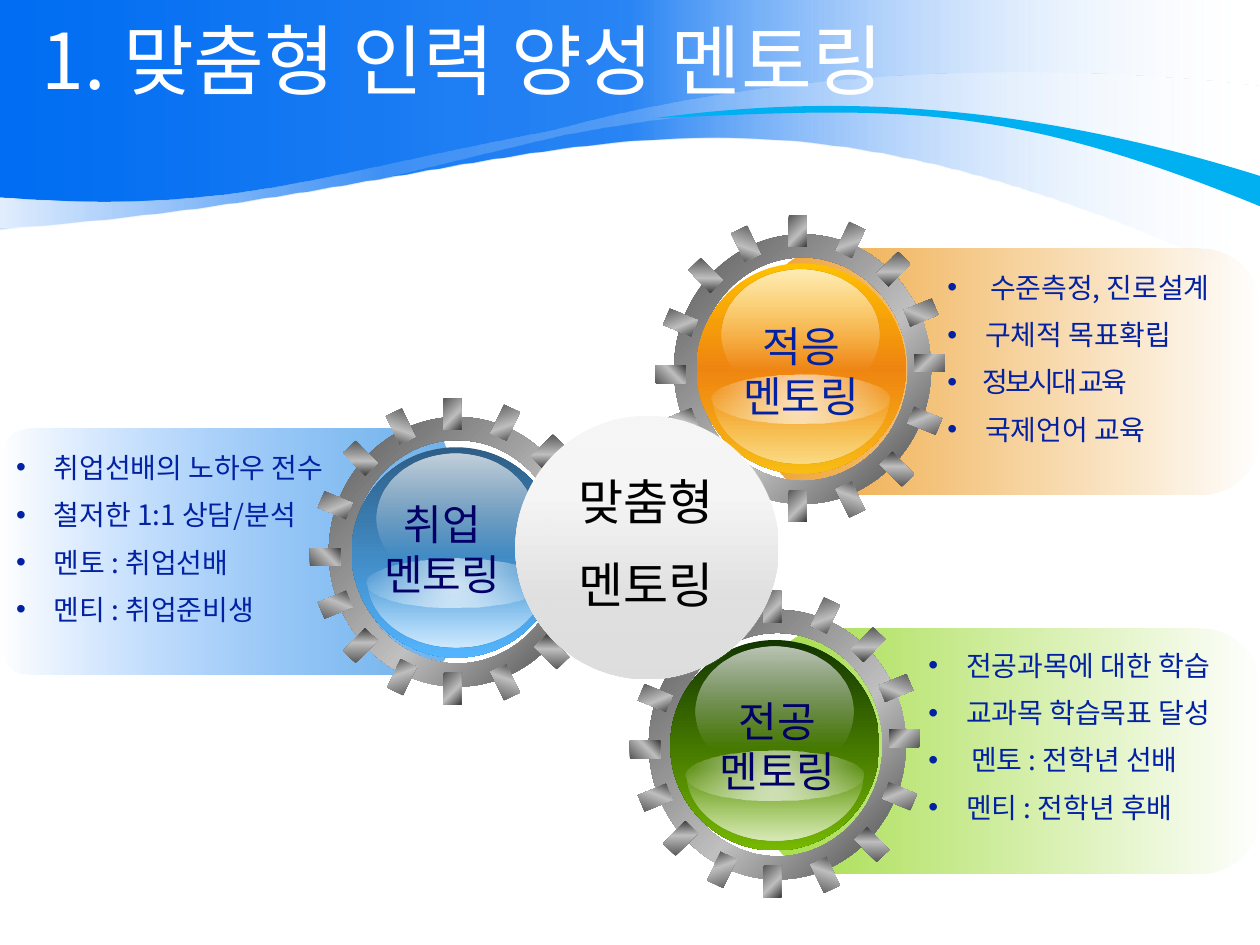
from pptx import Presentation
from pptx.dml.color import RGBColor
from pptx.enum.shapes import MSO_SHAPE
from pptx.enum.text import MSO_ANCHOR, MSO_AUTO_SIZE, PP_ALIGN
from pptx.oxml.ns import qn
from pptx.util import Inches, Pt
from lxml import etree

FONT = "Noto Sans CJK KR"
NAVY, INK = "0322A3", "000066"
STEEL = [(0, "595959"), (59, "BFBFBF"), (100, "404040")]
CAP = [(0, "FFFFFF", 71), (78, "FFFFFF", 0)]
SPOT = [(0, "FFFFFF", 73), (100, "FFFFFF", 6)]

deck = Presentation()
deck.slide_width, deck.slide_height = Inches(10), Inches(7.5)
slide = deck.slides.add_slide(deck.slide_layouts[5])
shapes = slide.shapes


def paint(shape, fill, angle=90, round_fill=False):
    shape.shadow.inherit = False
    shape.line.fill.background()
    if isinstance(fill, str):
        shape.fill.solid()
        shape.fill.fore_color.rgb = RGBColor.from_string(fill)
        return
    shape.fill.gradient()
    grad = shape._element.spPr.find(qn("a:gradFill"))
    for child in list(grad):
        grad.remove(child)
    grad.set("rotWithShape", "1")
    stops = etree.SubElement(grad, qn("a:gsLst"))
    for place, color, *alpha in fill:
        stop = etree.SubElement(stops, qn("a:gs"), pos=str(place * 1000))
        tint = etree.SubElement(stop, qn("a:srgbClr"), val=color)
        if alpha:
            etree.SubElement(tint, qn("a:alpha"), val=str(alpha[0] * 1000))
    if round_fill:
        ring = etree.SubElement(grad, qn("a:path"), path="circle")
        etree.SubElement(ring, qn("a:fillToRect"), l="50000", t="50000", r="50000", b="50000")
    else:
        etree.SubElement(grad, qn("a:lin"), ang=str(angle * 60000), scaled="0")


def write(text, box, size, color=NAVY, align=PP_ALIGN.CENTER, anchor=MSO_ANCHOR.TOP,
          gap=0, bullet=False, wrap=True, holder=None):
    holder = holder or shapes.add_textbox(0, 0, 0, 0)
    holder.left, holder.top, holder.width, holder.height = map(Inches, box)
    frame = holder.text_frame
    frame.word_wrap, frame.auto_size = wrap, MSO_AUTO_SIZE.NONE
    frame.vertical_anchor = anchor
    for i, item in enumerate(text):
        line, indent, track = item if isinstance(item, tuple) else (item, 0.3, 0)
        para = frame.add_paragraph() if i else frame.paragraphs[0]
        if bullet:
            props = para._p.get_or_add_pPr()
            props.set("marL", str(Inches(indent)))
            props.set("indent", str(-Inches(indent)))
            etree.SubElement(props, qn("a:buFont"), typeface="Arial")
            etree.SubElement(props, qn("a:buChar"), char="•")
        para.alignment, para.line_spacing = align, Pt(round(size * 1.19, 1))
        para.space_before = Pt(gap if i else 0)
        run = para.add_run()
        run.text = line
        run.font.name, run.font.size, run.font.bold = FONT, Pt(size), False
        run.font.color.rgb = RGBColor.from_string(color)
        mark = run._r.get_or_add_rPr()
        etree.SubElement(mark, qn("a:ea"), typeface=FONT)
        if track:
            mark.set("spc", str(track))


sky = [(0, "006DF2"), (50, "006DF2", 83), (100, "FFFFFF", 0)]
mist = [(0, "FFFFFF", 90), (31, "FFFFFF", 16), (86, "FFFFFF", 24)]
waves = [
    (sky, [(10.01, 0), (-0.01, 0), (-0.01, 1.81),
           (4.49, 1.5, 5.45, 0.14, 10.01, 2.24)]),
    (mist, [(10.01, 0.69), (9.55, 0.63, 6.92, 0.34, 4.4, 1.03),
            (2.42, 1.4, 1.86, 1.69, 0.01, 1.56), (-0.08, 1.56), (-0.01, 1.81),
            (2.03, 1.73, 2.66, 1.49, 4.48, 1.07),
            (5.43, 0.9, 7.46, 0.55, 10.01, 1.39)]),
    ("00B0F0", [(5.18, 0.94), (7.04, 0.86, 7.93, 0.78, 10.03, 1.65), (10.01, 1.4),
                (7.75, 0.69, 6.17, 0.81, 5.18, 0.94)]),
]
for fill, steps in waves:
    dots = [(Inches(x), Inches(y)) for step in steps for x, y in zip(step[::2], step[1::2])]
    pen = shapes.build_freeform(*dots[0])
    pen.add_line_segments(dots[1:])
    wave = pen.convert_to_shape()
    lines = iter(list(wave._element.iter(qn("a:lnTo"))))
    for step in steps[1:]:
        first = next(lines)
        if len(step) == 6:
            curve = etree.Element(qn("a:cubicBezTo"))
            first.addprevious(curve)
            for line in (first, next(lines), next(lines)):
                curve.append(line[0])
                line.getparent().remove(line)
    paint(wave, fill, angle=0)

panels = [
    (7.07, 4.01, 3.9, 270, 0.24, [(0, "8BC925"), (0, "A6DE4A"), (100, "A6DE4A", 0)]),
    (7.07, 1, 3.9, 270, 0.24, [(0, "EFA539"), (0, "EFA539"), (100, "EFA539", 0)]),
    (0.8, 2.6, 3.55, 90, 0.12, [(0, "86C5FA"), (0, "70B3EA"), (100, "338FFF", 0)]),
]
for x, y, tall, turn, bend, fill in panels:
    panel = shapes.add_shape(MSO_SHAPE.ROUNDED_RECTANGLE, Inches(x), Inches(y),
                             Inches(1.95), Inches(tall))
    panel.rotation, panel.adjustments[0] = turn, bend
    if turn == 270:
        panel._element.spPr.xfrm.set("flipH", "1")
    paint(panel, fill)

teeth = [
    (0.91, -0.15, 0, ""), (0.91, 2.03, 0, ""), (-0.1, 0.99, 270, ""), (1.96, 0.9, 90, "H"),
    (1.67, 0.15, 44.6, ""), (1.89, 0.5, 67.6, ""), (1.33, -0.08, 25.5, ""),
    (0.18, 0.2, 315.4, "H"), (-0.02, 0.58, 292.4, "H"), (0.5, -0.05, 334.5, "H"),
    (1.7, 1.74, 315.4, "V"), (1.92, 1.36, 292.4, "V"), (1.33, 1.98, 334.5, "V"),
    (0.18, 1.69, 44.6, "HV"), (-0.02, 1.37, 67.6, "HV"), (0.51, 1.94, 25.5, "HV"),
]
for left, top in [(2.61, 3.31), (5.35, 1.86), (5.15, 4.84)]:
    gear = shapes.add_group_shape().shapes
    ring = gear.add_shape(MSO_SHAPE.DONUT, Inches(left), Inches(top), Inches(2.04), Inches(2.14))
    ring.adjustments[0] = 0.09
    paint(ring, STEEL, angle=45)
    for x, y, turn, flips in teeth:
        tall = 0.24 if 60 < turn < 300 else 0.25
        tooth = gear.add_shape(MSO_SHAPE.RECTANGLE, Inches(left + x), Inches(top + y),
                               Inches(0.14), Inches(tall))
        tooth.rotation = turn
        for flip in flips:
            tooth._element.spPr.xfrm.set("flip" + flip, "1")
        paint(tooth, STEEL, angle=45)

orbs = [
    (2.79, 3.55, 72, [(0, "2E5E86"), (100, "53B5FF")]),
    (5.32, 5.08, 72, [(0, "123600"), (100, "76B800")]),
    (5.53, 2.09, 48, [(0, "FFC000"), (50, "EF8511"), (100, "F8BC14")]),
]
for left, top, glow, fill in orbs:
    orb = shapes.add_group_shape().shapes
    layers = [
        (0, 0, 1.66, 1.67, fill, False),
        (0.2, 0.05, 1.25, 1.03, CAP, False),
        (0.12, 0.88, 1.41, 0.39, SPOT, True),
        (0.13, 0.52, 1.4, 1.07, [(0, "FFFFFF", glow), (54, "FFFFFF", 0)], True),
    ]
    for x, y, wide, tall, tone, flip in layers:
        disc = orb.add_shape(MSO_SHAPE.OVAL, Inches(left + x), Inches(top + y),
                             Inches(wide), Inches(tall))
        if flip:
            disc._element.spPr.xfrm.set("flipV", "1")
        paint(disc, tone, round_fill=tone is SPOT)

for kind, fill in [(MSO_SHAPE.ROUNDED_RECTANGLE, [(29, "F2F2F2"), (69, "D9D9D9")]),
                   (MSO_SHAPE.OVAL, [(0, "FFFFFF", 33), (100, "FFFFFF", 13)])]:
    hub = shapes.add_shape(kind, Inches(4.09), Inches(3.3), Inches(2.09), Inches(2.09))
    if kind == MSO_SHAPE.ROUNDED_RECTANGLE:
        hub.adjustments[0] = 0.5
        hub.rotation = 180
        hub._element.spPr.xfrm.set("flipV", "1")
    paint(hub, fill)
write(["맞춤형", "멘토링"], (4.28, 3.86, 1.69, 0.9), 28, color="000000",
      anchor=MSO_ANCHOR.MIDDLE, gap=14, wrap=False)

for word, x, y, color in [("취업", 2.73, 3.91, INK), ("적응", 5.58, 2.5, NAVY),
                          ("전공", 5.39, 5.47, INK)]:
    write([word, "멘토링"], (x, y, 1.56, 0.91), 24, color=color)

lists = [
    (7.27, 5.1, 2.73, ["전공과목에 대한 학습", "교과목 학습목표 달성",
                       ("멘토 : 전학년 선배", 0.34, 0), "멘티 : 전학년 후배"]),
    (0.03, 3.53, 1.69, ["취업선배의 노하우 전수", "철저한 1:1 상담/분석",
                        "멘토 : 취업선배", "멘티 : 취업준비생"]),
    (7.42, 2.1, 2.03, [("수준측정, 진로설계", 0.34, 0), "구체적 목표확립",
                       ("정보시대 교육", 0.28, -150), "국제언어 교육"]),
]
for x, y, wide, lines in lists:
    write(lines, (x, y, wide, 1.71), 16, align=PP_ALIGN.LEFT, gap=8, bullet=True, wrap=False)

title = shapes.title
write(["1. 맞춤형 인력 양성 멘토링"], (0.23, 0.23, 9.34, 0.48), 44, color="FFFFFF",
      align=PP_ALIGN.LEFT, anchor=MSO_ANCHOR.MIDDLE, holder=title)
shapes._spTree.append(title._element)

deck.save("out.pptx")
